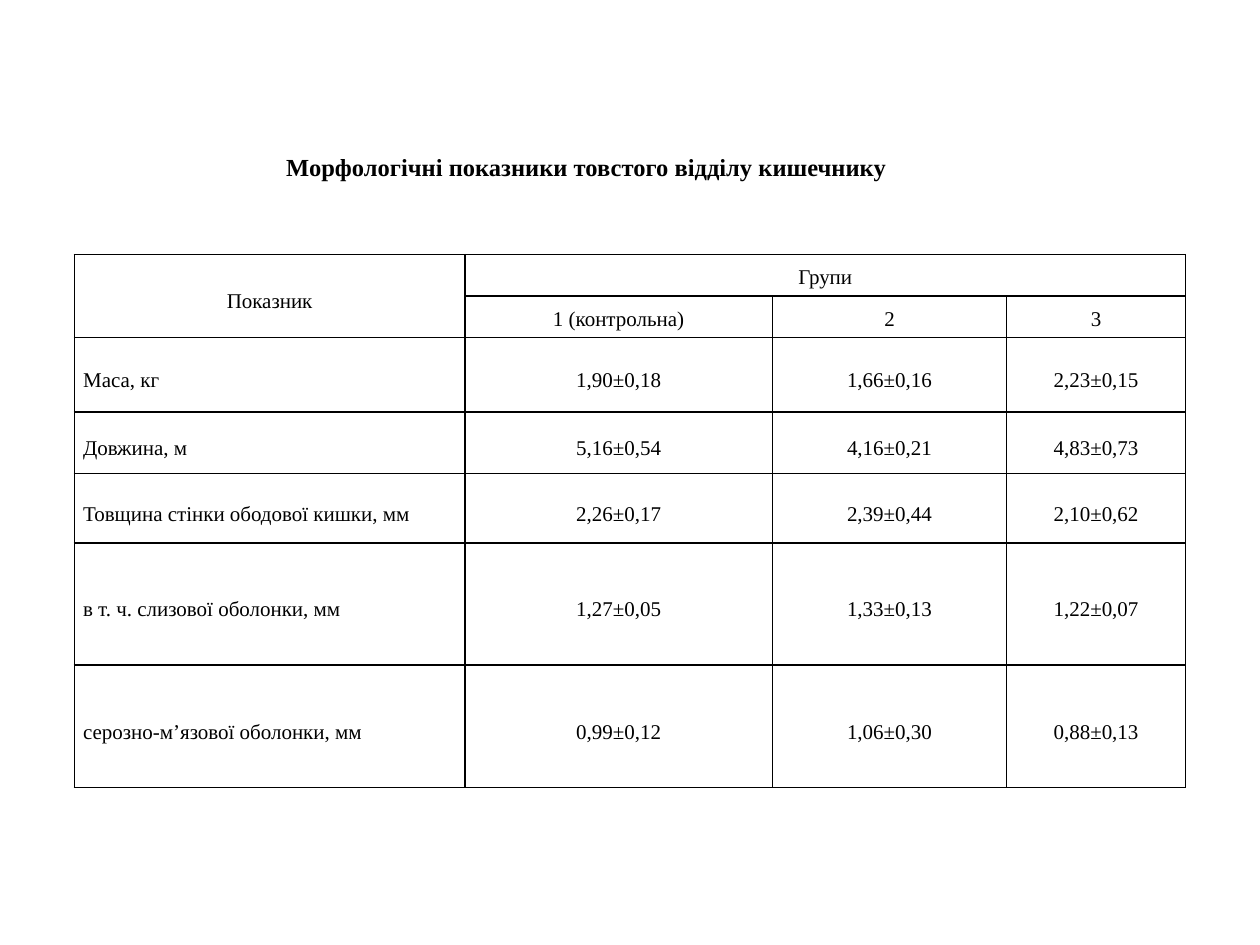
from lxml.etree import SubElement
from pptx import Presentation
from pptx.dml.color import RGBColor
from pptx.enum.text import MSO_ANCHOR as Anchor, MSO_AUTO_SIZE as AutoSize, PP_ALIGN as Align
from pptx.oxml.ns import qn
from pptx.util import Inches, Pt

COLORS = {"text": "000000", "border": "000000", "cell": "FFFFFF"}
FONT = "Times New Roman"

TITLE = "Морфологічні показники товстого відділу кишечнику"
ROWS = [
    ("Показник", "Групи", "", ""),
    ("", "1 (контрольна)", "2", "3"),
    ("Маса, кг", "1,90±0,18", "1,66±0,16", "2,23±0,15"),
    ("Довжина, м", "5,16±0,54", "4,16±0,21", "4,83±0,73"),
    ("Товщина стінки ободової кишки, мм", "2,26±0,17", "2,39±0,44", "2,10±0,62"),
    ("в т. ч. слизової оболонки, мм", "1,27±0,05", "1,33±0,13", "1,22±0,07"),
    ("серозно-м’язової оболонки, мм", "0,99±0,12", "1,06±0,30", "0,88±0,13"),
]
HEADER_ROWS = 2
MERGES = [((0, 0), (1, 0)), ((0, 1), (0, 3))]

COLUMN_WIDTHS = [3.1, 2.44, 1.86, 1.42]
ROW_HEIGHTS = [0.33, 0.33, 0.59, 0.49, 0.55, 0.97, 0.97]
TABLE_LEFT, TABLE_TOP = 0.59, 2.02
TITLE_BOX = (-0.59, 1.07, 10, 0.5)
TITLE_INDENT = 0.49
CELL_MARGIN = 0.07


def add_run(paragraph, text, size, bold=False):
    run = paragraph.add_run()
    run.text = text
    run.font.name = FONT
    run.font.size = Pt(size)
    run.font.bold = bold
    run.font.color.rgb = RGBColor.from_string(COLORS["text"])


def add_borders(cell):
    properties = cell._tc.get_or_add_tcPr()
    for position, side in enumerate(("lnL", "lnR", "lnT", "lnB")):
        line = properties.makeelement(qn(f"a:{side}"), {"w": str(Pt(1))})
        fill = SubElement(line, qn("a:solidFill"))
        SubElement(fill, qn("a:srgbClr"), val=COLORS["border"])
        properties.insert(position, line)  # borders must precede the fill


def add_title(slide):
    box = slide.shapes.add_textbox(*map(Inches, TITLE_BOX))
    frame = box.text_frame
    frame.word_wrap = False
    frame.auto_size = AutoSize.SHAPE_TO_FIT_TEXT
    frame.vertical_anchor = Anchor.MIDDLE
    paragraph = frame.paragraphs[0]
    paragraph.alignment = Align.CENTER
    paragraph._p.get_or_add_pPr().set("indent", str(Inches(TITLE_INDENT)))
    add_run(paragraph, TITLE, 14, bold=True)


def fill_cell(cell, text, row, column):
    cell.margin_left = cell.margin_right = Inches(CELL_MARGIN)
    cell.margin_top = cell.margin_bottom = 0
    is_label = column == 0
    is_header = row < HEADER_ROWS
    cell.vertical_anchor = Anchor.TOP if is_header and not is_label else Anchor.MIDDLE
    cell.fill.solid()
    cell.fill.fore_color.rgb = RGBColor.from_string(COLORS["cell"])
    add_borders(cell)
    paragraph = cell.text_frame.paragraphs[0]
    paragraph.alignment = Align.LEFT if is_label and not is_header else Align.CENTER
    paragraph.line_spacing = 1.5
    if text:
        add_run(paragraph, text, 12)


def add_indicator_table(slide):
    frame = slide.shapes.add_table(
        len(ROWS), len(COLUMN_WIDTHS), Inches(TABLE_LEFT), Inches(TABLE_TOP),
        Inches(sum(COLUMN_WIDTHS)), Inches(sum(ROW_HEIGHTS)))
    table = frame.table
    table.first_row = table.horz_banding = False
    for column, width in zip(table.columns, COLUMN_WIDTHS):
        column.width = Inches(width)
    for row, height in zip(table.rows, ROW_HEIGHTS):
        row.height = Inches(height)
    for row, texts in enumerate(ROWS):
        for column, text in enumerate(texts):
            fill_cell(table.cell(row, column), text, row, column)
    for first, last in MERGES:
        table.cell(*first).merge(table.cell(*last))


def main():
    presentation = Presentation()
    presentation.slide_width, presentation.slide_height = Inches(10), Inches(7.5)
    slide = presentation.slides.add_slide(presentation.slide_layouts[6])
    add_indicator_table(slide)
    add_title(slide)
    presentation.save("out.pptx")


if __name__ == "__main__":
    main()
